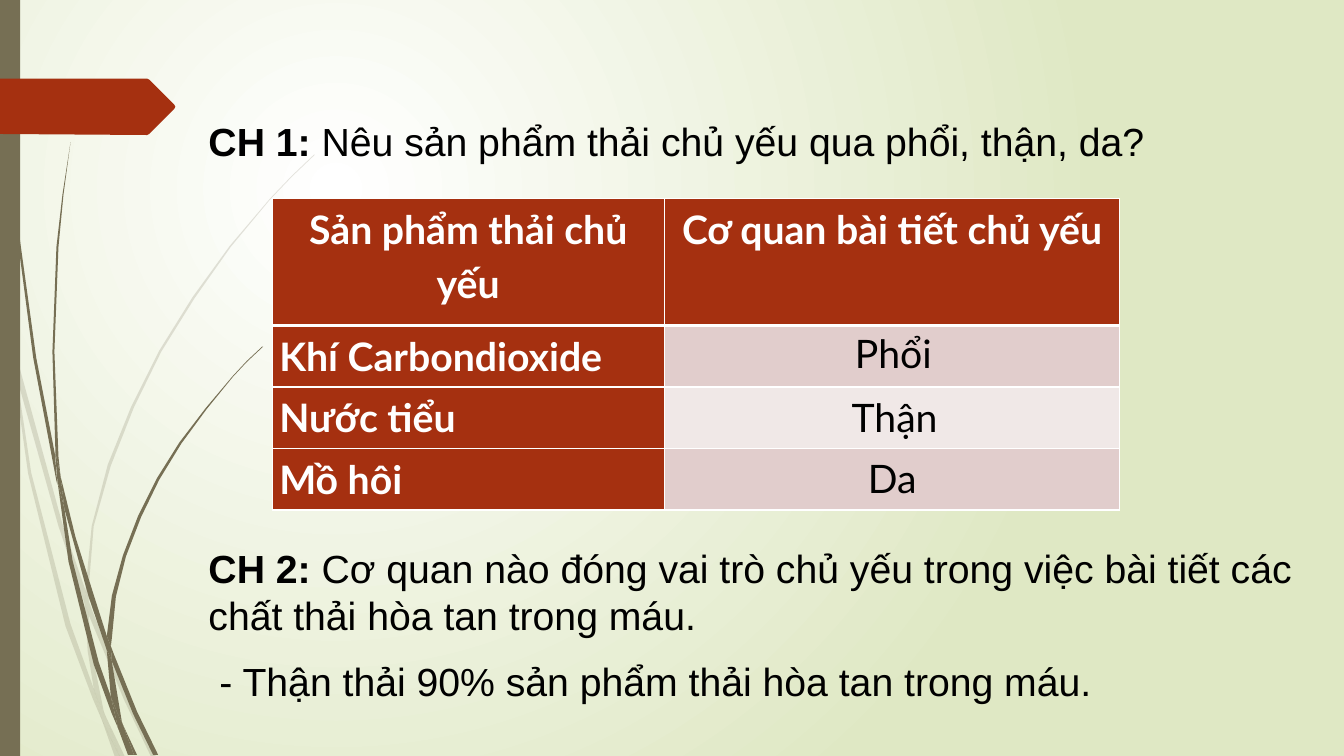
from lxml import etree
from pptx import Presentation
from pptx import util as u
from pptx.dml.color import RGBColor
from pptx.enum import shapes, text
from pptx.oxml.ns import qn

COLORS = {"olive": "766F54", "rust": "A53010", "white": "FFFFFF", "black": "000000",
          "pale": "DFE8C4", "band": "E1CDCC", "light band": "F0E8E7"}
HUNDREDTH_INCH = u.Cm(0.0254)

# Outline points in hundredths of an inch
FAINT_LEAVES = [
    [(11, 350), (9, 322), (0, 282), (0, 299), (10, 344)],
    [(58, 522), (84, 599), (85, 586), (62, 520), (14, 345), (17, 376)],
    [(92, 607), (88, 596), (88, 610), (123, 694), (150, 751), (155, 751), (127, 692)],
    [(119, 751), (124, 751), (105, 711)],
    [(93, 683), (70, 619), (31, 469), (17, 376), (11, 350), (28, 470), (65, 621),
     (92, 693), (101, 714), (99, 707)],
    [(84, 599), (87, 646), (93, 683), (96, 692), (105, 711), (103, 706), (91, 646),
     (88, 610), (88, 608)],
    [(88, 584), (93, 522), (110, 462), (133, 404), (160, 349), (193, 296), (229, 245),
     (268, 198), (290, 175), (312, 154), (312, 153), (289, 175), (268, 197), (228, 244),
     (191, 295), (158, 348), (130, 404), (107, 461), (91, 522), (85, 584), (85, 586), (88, 596)],
    [(101, 714), (114, 751), (119, 751)],
    [(88, 608), (88, 610), (88, 596), (85, 586), (84, 599)],
    [(96, 692), (93, 683), (99, 707), (101, 714), (119, 751), (105, 711)],
]
LEAVES = [
    [(7, 110), (17, 233), (33, 355), (56, 477), (57, 481), (55, 457), (55, 453), (36, 355),
     (19, 232), (8, 109), (5, 48), (4, 0), (3, 0), (4, 48)],
    [(88, 592), (106, 645), (106, 633), (106, 631), (93, 590), (75, 533), (60, 472), (64, 505)],
    [(113, 649), (110, 641), (111, 656), (132, 708), (152, 749), (157, 749), (136, 706)],
    [(110, 691), (98, 657), (72, 556), (64, 505), (57, 477), (68, 557), (93, 659),
     (111, 708), (117, 722), (116, 717)],
    [(60, 472), (58, 453), (54, 349), (58, 245), (63, 193), (70, 141), (62, 193),
     (56, 245), (52, 349), (55, 449)],
    [(133, 749), (136, 749), (122, 719)],
    [(57, 477), (64, 505), (60, 472), (55, 449), (55, 453)],
    [(111, 633), (115, 592), (125, 552), (140, 513), (158, 476), (180, 440), (205, 406),
     (231, 374), (245, 359), (261, 344), (260, 344), (245, 358), (231, 373), (204, 405),
     (178, 439), (156, 474), (137, 512), (122, 551), (111, 591), (106, 631), (110, 641)],
    [(117, 722), (127, 749), (131, 749)],
    [(106, 645), (110, 691), (116, 706), (122, 719), (121, 716), (111, 656), (109, 651)],
    [(106, 645), (109, 651), (111, 656), (110, 641), (106, 631), (106, 633)],
    [(116, 706), (110, 691), (116, 717), (117, 722), (130, 749), (133, 749), (122, 719)],
]
BOOKMARK = [(0, 78), (146, 78), (148, 79), (173, 104), (174, 106), (173, 108),
            (148, 133), (146, 134), (0, 133)]


def rgb(name):
    return RGBColor.from_string(COLORS[name])


def write(paragraph, words, font="Arial", color="black", bold=False, align=text.PP_ALIGN.LEFT,
          spacing=None):
    """Append one formatted run to the paragraph."""
    paragraph.alignment = align
    if spacing:
        paragraph.line_spacing = spacing
    run = paragraph.add_run()
    run.text = words
    run.font.name, run.font.size, run.font.bold = font, u.Pt(28), bold
    run.font.color.rgb = rgb(color)


class LessonSlide:
    def __init__(self, deck):
        self.slide = deck.slides.add_slide(deck.slide_layouts[5])
        self.shapes = self.slide.shapes

    def background(self, centre, edge):
        fill = self.slide.background.fill
        fill.gradient()
        for stop, color in zip(fill.gradient_stops, (centre, edge)):
            stop.color.rgb = rgb(color)
        gradient = self.slide.element.find(".//" + qn("a:gradFill"))
        gradient.remove(gradient.find(qn("a:lin")))
        radial = etree.SubElement(gradient, qn("a:path"), path="circle")
        etree.SubElement(radial, qn("a:fillToRect"), l="50000", t="50000", r="100000", b="100000")

    def paint(self, shape, color, opacity=100):
        shape.shadow.inherit = False
        shape.fill.solid()
        shape.fill.fore_color.rgb = rgb(color)
        shape.line.fill.background()
        if opacity < 100:
            solid = shape.element.spPr.find(qn("a:solidFill"))
            etree.SubElement(solid[0], qn("a:alpha"), val=str(opacity * 1000))

    def outline(self, points, color, opacity=100):
        builder = self.shapes.build_freeform(*points[0], scale=HUNDREDTH_INCH)
        builder.add_line_segments(points[1:], close=True)
        self.paint(builder.convert_to_shape(), color, opacity)

    def bar(self, box, color):
        self.paint(self.shapes.add_shape(shapes.MSO_SHAPE.RECTANGLE, *map(u.Cm, box)), color)

    def questions(self, box, items, gap):
        title = self.shapes.title
        title.left, title.top, title.width, title.height = map(u.Cm, box)
        frame = title.text_frame
        frame.word_wrap = True
        frame.auto_size = text.MSO_AUTO_SIZE.NONE
        frame.vertical_anchor = text.MSO_ANCHOR.MIDDLE
        for index, (label, question) in enumerate(items):
            paragraph = frame.add_paragraph() if index else frame.paragraphs[0]
            paragraph.space_before = u.Pt(gap if index else 0)
            write(paragraph, label, bold=True)
            write(paragraph, question)

    def label(self, box, words, indent=0.25, anchor=text.MSO_ANCHOR.MIDDLE, **style):
        frame = self.shapes.add_textbox(*map(u.Cm, box)).text_frame
        frame.word_wrap = True
        frame.vertical_anchor = anchor
        frame.margin_left = u.Cm(indent)
        write(frame.paragraphs[0], words, **style)

    def cell(self, cell, words, color, align, bottom=1):
        cell.margin_left = cell.margin_right = u.Cm(0.18)
        cell.margin_top = cell.margin_bottom = 0
        if words:
            write(cell.text_frame.paragraphs[0], words, font="Lato", color="white", bold=True,
                  align=align, spacing=1.15)
        properties = cell._tc.get_or_add_tcPr()
        for side, points in (("L", 1), ("R", 1), ("T", 1), ("B", bottom)):
            line = etree.SubElement(properties, qn(f"a:ln{side}"), w=str(u.Pt(points)))
            solid = etree.SubElement(line, qn("a:solidFill"))
            etree.SubElement(solid, qn("a:srgbClr"), val=COLORS["white"])
        cell.fill.solid()
        cell.fill.fore_color.rgb = rgb(color)

    def waste_table(self, left, top, widths, heights, headings, products):
        table = self.shapes.add_table(len(heights), len(widths), u.Cm(left), u.Cm(top),
                                      u.Cm(sum(widths)), u.Cm(sum(heights))).table
        for column, width in zip(table.columns, widths):
            column.width = u.Cm(width)
        for row, height in zip(table.rows, heights):
            row.height = u.Cm(height)
        for index, heading in enumerate(headings):
            self.cell(table.cell(0, index), heading, "rust", text.PP_ALIGN.CENTER, bottom=3)
        for row, product in enumerate(products, 1):
            self.cell(table.cell(row, 0), product, "rust", text.PP_ALIGN.JUSTIFY)
            self.cell(table.cell(row, 1), "", "band" if row % 2 else "light band", None)


def main():
    deck = Presentation()
    deck.slide_width, deck.slide_height = u.Cm(33.87), u.Cm(19.05)
    lesson = LessonSlide(deck)
    lesson.background("white", "pale")
    for leaf in FAINT_LEAVES:
        lesson.outline(leaf, "olive", opacity=20)
    for leaf in LEAVES:
        lesson.outline(leaf, "olive")
    lesson.bar((0, 0, 0.51, 19.05), "olive")
    lesson.outline(BOOKMARK, "rust")

    lesson.questions((5, 2.82, 28.85, 13.41), [
        ("CH 1: ", "Nêu sản phẩm thải chủ yếu qua phổi, thận, da?"),
        ("CH 2: ", "Cơ quan nào đóng vai trò chủ yếu trong việc bài tiết các chất thải "
                   "hòa tan trong máu."),
    ], gap=271)
    lesson.waste_table(6.86, 5, (9.88, 11.48), (3.2, 1.55, 1.55, 1.55),
                       ("Sản phẩm thải chủ yếu", "Cơ quan bài tiết chủ yếu"),
                       ("Khí Carbondioxide", "Nước tiểu", "Mồ hôi"))
    lesson.label((5, 16.43, 26.06, 1.45), "- Thận thải 90% sản phẩm thải hòa tan trong máu.",
                 indent=0.53, anchor=text.MSO_ANCHOR.TOP)
    for organ, left, top in (("Phổi", 19.38, 8.23), ("Thận", 19.41, 9.86), ("Da", 19.35, 11.4)):
        lesson.label((left, top, 6.27, 1.3), organ, font="Lato", align=text.PP_ALIGN.CENTER)
    deck.save("out.pptx")


if __name__ == "__main__":
    main()
